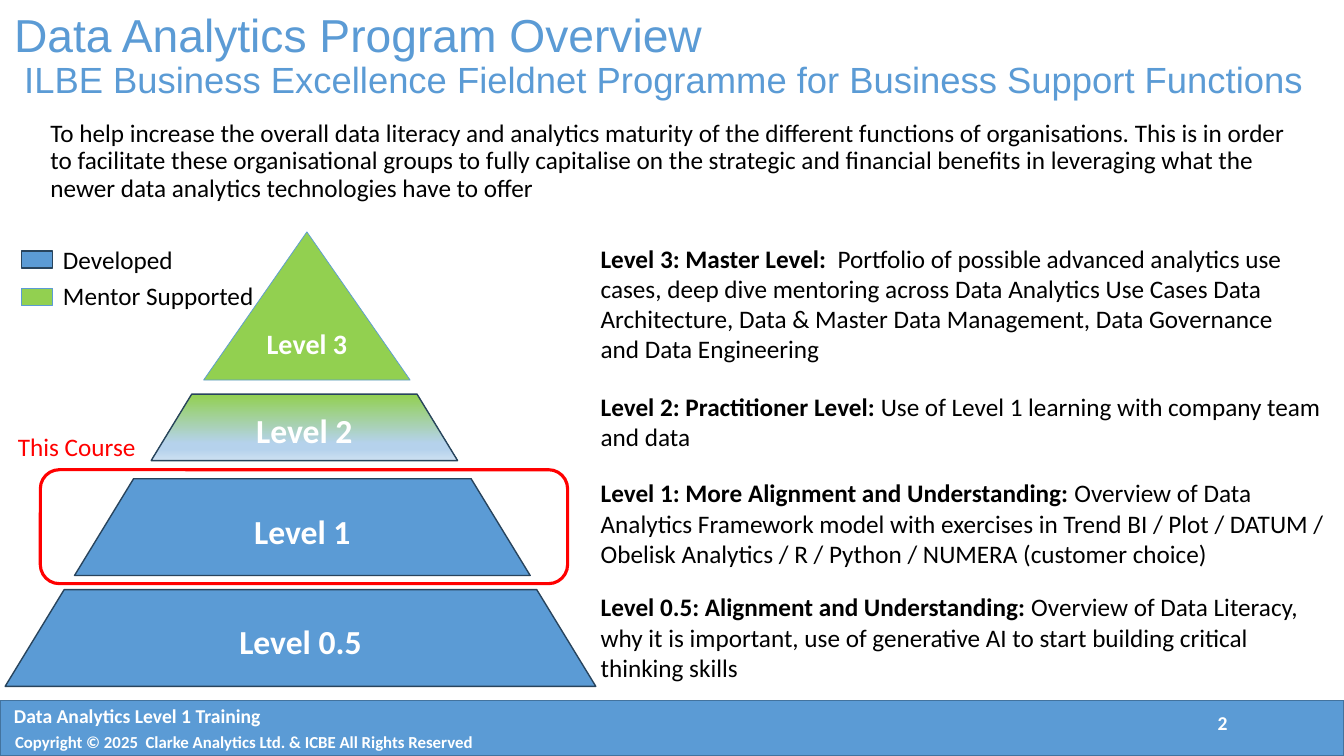
"""Build the data analytics program overview slide."""
from lxml import etree
from pptx import Presentation
from pptx.dml.color import RGBColor
from pptx.enum.shapes import MSO_SHAPE
from pptx.enum.text import MSO_ANCHOR, MSO_AUTO_SIZE, PP_ALIGN
from pptx.oxml.ns import qn
from pptx.util import Inches, Pt

TRIANGLE, TRAPEZOID = MSO_SHAPE.ISOSCELES_TRIANGLE, MSO_SHAPE.TRAPEZOID
RECTANGLE, ROUNDED = MSO_SHAPE.RECTANGLE, MSO_SHAPE.ROUNDED_RECTANGLE
LEFT, CENTER = PP_ALIGN.LEFT, PP_ALIGN.CENTER
TOP, MIDDLE = MSO_ANCHOR.TOP, MSO_ANCHOR.MIDDLE
NO_AUTOFIT = MSO_AUTO_SIZE.NONE
BLUE = RGBColor(0x5B, 0x9B, 0xD5)
FOOTER_EDGE = RGBColor(0x43, 0x73, 0x9E)
NAVY = RGBColor(0x28, 0x44, 0x5D)
GREEN = RGBColor(0x92, 0xD0, 0x50)
PALE_BLUE = RGBColor(0xB5, 0xD2, 0xEC)
PALEST_BLUE = RGBColor(0xCE, 0xE1, 0xF2)
RED = RGBColor(0xFF, 0x00, 0x00)
BLACK = RGBColor(0x00, 0x00, 0x00)
WHITE = RGBColor(0xFF, 0xFF, 0xFF)

presentation = Presentation()
presentation.slide_width, presentation.slide_height = Inches(13.33), Inches(7.5)
COLUMN = presentation.slide_width / 100
ROW = presentation.slide_height / 100
slide = presentation.slides.add_slide(presentation.slide_layouts[1])


def add_block(kind, left, top, width, height, fill, line, weight):
    """Add a preset shape; lengths are percentages of the slide."""
    shape = slide.shapes.add_shape(kind, int(left * COLUMN), int(top * ROW),
                                   int(width * COLUMN), int(height * ROW))
    shape.shadow.inherit = False
    if fill is None:
        shape.fill.background()
    else:
        shape.fill.solid()
        shape.fill.fore_color.rgb = fill
    shape.line.color.rgb = line
    shape.line.width = Pt(weight)
    return shape


def write(shape, parts, size, color, align=LEFT, anchor=TOP):
    """Fill a shape with one paragraph of (text, bold) parts."""
    frame = shape.text_frame
    frame.word_wrap = True
    frame.auto_size = NO_AUTOFIT
    frame.vertical_anchor = anchor
    paragraph = frame.paragraphs[0]
    paragraph.alignment = align
    for text, bold in parts:
        run = paragraph.add_run()
        run.text = text
        run.font.name, run.font.size, run.font.bold = "Calibri", Pt(size), bold
        run.font.color.rgb = color
    return paragraph


title, intro = slide.placeholders
for placeholder, (left, top, width, height) in (
        (title, (1.05, 1.33, 97.35, 12.4)), (intro, (3, 15.33, 94.9, 18.53))):
    placeholder.left, placeholder.top = int(left * COLUMN), int(top * ROW)
    placeholder.width, placeholder.height = int(width * COLUMN), int(height * ROW)

title_frame = title.text_frame
title_frame.text = ("Data Analytics Program Overview\n"
                    "ILBE Business Excellence Fieldnet Programme for Business Support Functions")
title_frame.auto_size = NO_AUTOFIT
title_frame.vertical_anchor = MIDDLE
title_frame.margin_left = title_frame.margin_right = 0
title_frame.margin_top = title_frame.margin_bottom = 0
for paragraph, size in zip(title_frame.paragraphs, (33, 26)):
    paragraph.alignment = LEFT
    paragraph.line_spacing = 0.9
    paragraph.font.name, paragraph.font.size = "Arial", Pt(size)
    paragraph.font.color.rgb = BLUE
title_frame.paragraphs[1]._p.get_or_add_pPr().set("marL", str(Inches(0.1)))

intro_paragraph = write(intro, [(
    "To help increase the overall data literacy and analytics maturity of the different "
    "functions of organisations. This is in order to facilitate these organisational groups "
    "to fully capitalise on the strategic and financial benefits in leveraging what the newer "
    "data analytics technologies have to offer", False)], 18, BLACK)
intro_paragraph.line_spacing = 0.9
intro_paragraph.space_before = Pt(0)
intro_properties = intro_paragraph._p.get_or_add_pPr()
intro_properties.set("marL", "0")
intro_properties.set("indent", "0")
etree.SubElement(intro_properties, qn("a:buNone"))

add_block(RECTANGLE, 0, 92.67, 100, 7.33, BLUE, FOOTER_EDGE, 1)

levels = {}
for name, kind, box, fill, line, weight, size in (
        ("Level 3", TRIANGLE, (15.15, 30.67, 15.37, 19.6), GREEN, BLUE, 0.5, 20),
        ("Level 2", TRAPEZOID, (11.25, 52.13, 22.8, 8.8), GREEN, NAVY, 1, 24),
        ("Level 1", TRAPEZOID, (5.55, 63.33, 33.9, 12.8), BLUE, NAVY, 1, 24),
        ("Level 0.5", TRAPEZOID, (0.38, 78, 43.95, 12.8), BLUE, NAVY, 1, 24)):
    levels[name] = add_block(kind, *box, fill, line, weight)
    levels[name].adjustments[0] = 0.5 if kind == TRIANGLE else 0.61
    write(levels[name], [(name, True)], size, WHITE, CENTER, MIDDLE)

level_2_fill = levels["Level 2"].fill
level_2_fill.gradient()
level_2_fill.gradient_angle = 270
stops = levels["Level 2"]._element.spPr.find(qn("a:gradFill")).find(qn("a:gsLst"))
for stop in list(stops):
    stops.remove(stop)
for percent, color in ((0, GREEN), (74, PALE_BLUE), (83, PALE_BLUE), (100, PALEST_BLUE)):
    stop = etree.SubElement(stops, qn("a:gs"), pos=str(percent * 1000))
    etree.SubElement(stop, qn("a:srgbClr"), val=str(color))

for top, fill, line, weight in ((33.2, BLUE, NAVY, 1), (38.13, GREEN, BLUE, 0.5)):
    add_block(RECTANGLE, 1.58, top, 2.33, 2.27, fill, line, weight)
add_block(ROUNDED, 3, 62.13, 39.23, 15.07, None, RED, 2.25)

for box, parts, size, color, align in (
        ((43.95, 31.47, 54.45, 17.47),
         [("Level 3: Master Level:  ", True),
          ("Portfolio of possible advanced analytics use cases, deep dive mentoring across "
           "Data Analytics Use Cases Data Architecture, Data & Master Data Management, "
           "Data Governance and Data Engineering", False)], 18, BLACK, LEFT),
        ((43.95, 51.07, 57, 9.47),
         [("Level 2: Practitioner Level: ", True),
          ("Use of Level 1 learning with company team and data", False)], 18, BLACK, LEFT),
        ((43.95, 62.53, 56.03, 13.47),
         [("Level 1: More Alignment and Understanding:", True),
          (" Overview of Data Analytics Framework model with exercises in Trend BI / Plot / "
           "DATUM / Obelisk Analytics / R / Python / NUMERA (customer choice)", False)],
         18, BLACK, LEFT),
        ((43.95, 77.6, 56.03, 13.47),
         [("Level 0.5: Alignment and Understanding:", True),
          (" Overview of Data Literacy, why it is important, use of generative AI to start "
           "building critical thinking skills", False)], 18, BLACK, LEFT),
        ((3.95, 31.6, 16, 5.33), [("Developed", False)], 18, BLACK, LEFT),
        ((3.95, 36.4, 16, 5.33), [("Mentor Supported", False)], 18, BLACK, LEFT),
        ((0.6, 56.4, 11, 5.33), [("This Course", False)], 18, RED, LEFT),
        ((89.85, 93.33, 2.25, 4.53), [("2", True)], 14, WHITE, CENTER),
        ((0.3, 92.4, 22, 4.53), [("Data Analytics Level 1 Training", True)], 14, WHITE, LEFT),
        ((0.38, 96.13, 43.5, 4),
         [("Copyright © 2025  Clarke Analytics Ltd. & ICBE All Rights Reserved", True)],
         12, WHITE, LEFT)):
    left, top, width, height = box
    text_box = slide.shapes.add_textbox(int(left * COLUMN), int(top * ROW),
                                        int(width * COLUMN), int(height * ROW))
    write(text_box, parts, size, color, align)

presentation.save("out.pptx")
